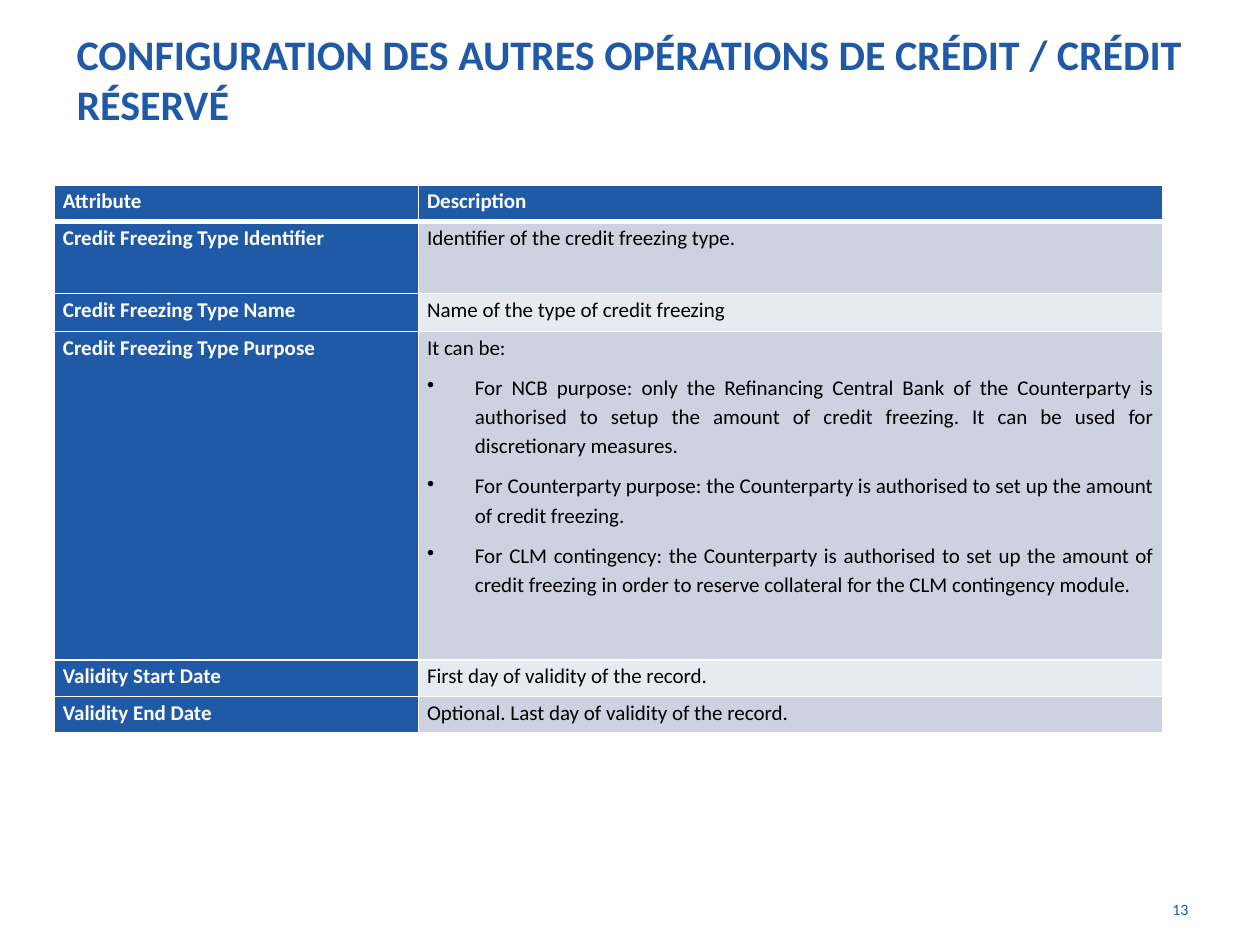
from lxml import etree
from pptx import Presentation
from pptx.dml.color import RGBColor
from pptx.enum.text import MSO_ANCHOR, PP_ALIGN
from pptx.oxml.ns import qn
from pptx.util import Inches, Pt

BLUE = RGBColor(0x20, 0x5A, 0xA7)
WHITE = RGBColor(0xFF, 0xFF, 0xFF)
BLACK = RGBColor(0, 0, 0)
DARK = RGBColor(0xCD, 0xD2, 0xE1)
LIGHT = RGBColor(0xE8, 0xEA, 0xF1)
LEFT, RIGHT, JUST = PP_ALIGN.LEFT, PP_ALIGN.RIGHT, PP_ALIGN.JUSTIFY
TOP, MIDDLE = MSO_ANCHOR.TOP, MSO_ANCHOR.MIDDLE

# Each row: height, attribute, description, bullet points
ROWS = [
    (0.29, "Attribute", "Description", []),
    (0.57, "Credit Freezing Type Identifier",
     "Identifier of the credit freezing type.", []),
    (0.3, "Credit Freezing Type Name",
     "Name of the type of credit freezing", []),
    (2.61, "Credit Freezing Type Purpose", "It can be:", [
        "For NCB purpose: only the Refinancing Central Bank of the "
        "Counterparty is authorised to setup the amount of credit freezing. "
        "It can be used for discretionary measures.",
        "For Counterparty purpose: the Counterparty is authorised to set up "
        "the amount of credit freezing.",
        "For CLM contingency: the Counterparty is authorised to set up the "
        "amount of credit freezing in order to reserve collateral for the "
        "CLM contingency module."]),
    (0.29, "Validity Start Date", "First day of validity of the record.", []),
    (0.29, "Validity End Date",
     "Optional. Last day of validity of the record.", []),
]


class Deck:
    face = "Calibri"

    def __init__(self, slide):
        self.slide = slide

    def style(self, para, size, color, bold=False, align=LEFT):
        para.alignment = align
        font = para.font
        font.name, font.size, font.bold = self.face, Pt(size), bold
        font.color.rgb = color

    def text(self, words, x, y, w, h, size, bold=False, align=LEFT,
             anchor=TOP):
        box = self.slide.shapes.add_textbox(
            Inches(x), Inches(y), Inches(w), Inches(h))
        frame = box.text_frame
        frame.word_wrap = True
        frame.vertical_anchor = anchor
        para = frame.paragraphs[0]
        para.text = words
        self.style(para, size, BLUE, bold, align)

    def bullet(self, para):
        props = para._p.get_or_add_pPr()
        props.set("marL", str(Inches(0.38)))
        props.set("indent", str(-Inches(0.38)))
        etree.SubElement(props, qn("a:buChar")).set("char", "•")

    def border(self, cell, low):
        props = cell._tc.get_or_add_tcPr()
        for side, width in (("L", 1), ("R", 1), ("T", 1), ("B", low)):
            line = etree.SubElement(props, qn("a:ln" + side))
            line.set("w", str(Pt(width)))
            fill = etree.SubElement(line, qn("a:solidFill"))
            etree.SubElement(fill, qn("a:srgbClr")).set("val", str(WHITE))

    def cell(self, cell, lines, fill, color, bold, align, low):
        self.border(cell, low)
        cell.fill.solid()
        cell.fill.fore_color.rgb = fill
        cell.margin_left = cell.margin_right = Inches(0.07)
        cell.margin_top = cell.margin_bottom = 0
        frame = cell.text_frame
        for i, words in enumerate(lines):
            para = frame.add_paragraph() if i else frame.paragraphs[0]
            para.text = words
            para.line_spacing = 1.15
            para.space_after = Pt(3)
            if i:
                para.space_before = Pt(3)
                self.bullet(para)
            self.style(para, 12, color, bold, align)

    def table(self, rows, x, y, widths):
        high = sum(row[0] for row in rows)
        table = self.slide.shapes.add_table(
            len(rows), len(widths), Inches(x), Inches(y),
            Inches(sum(widths)), Inches(high)).table
        for col, width in zip(table.columns, widths):
            col.width = Inches(width)
        for r, (tall, name, note, points) in enumerate(rows):
            table.rows[r].height = Inches(tall)
            head = r == 0
            align, low = (LEFT, 3) if head else (JUST, 1)
            band = BLUE if head else DARK if r % 2 else LIGHT
            self.cell(table.cell(r, 0), [name], BLUE, WHITE, True, align, low)
            self.cell(table.cell(r, 1), [note, *points], band,
                      WHITE if head else BLACK, head, align, low)


def main():
    prs = Presentation()
    prs.slide_width, prs.slide_height = Inches(10), Inches(7.5)
    deck = Deck(prs.slides.add_slide(prs.slide_layouts[6]))

    # Title
    deck.text("CONFIGURATION DES AUTRES OPÉRATIONS DE CRÉDIT / CRÉDIT RÉSERVÉ",
              0.51, 0, 9, 1.25, 24, bold=True, anchor=MIDDLE)
    # Attribute table
    deck.table(ROWS, 0.43, 1.47, (2.89, 5.91))
    # Page number
    deck.text("13", 8.94, 7.09, 0.59, 0.39, 9, align=RIGHT)

    prs.save("out.pptx")


if __name__ == "__main__":
    main()
